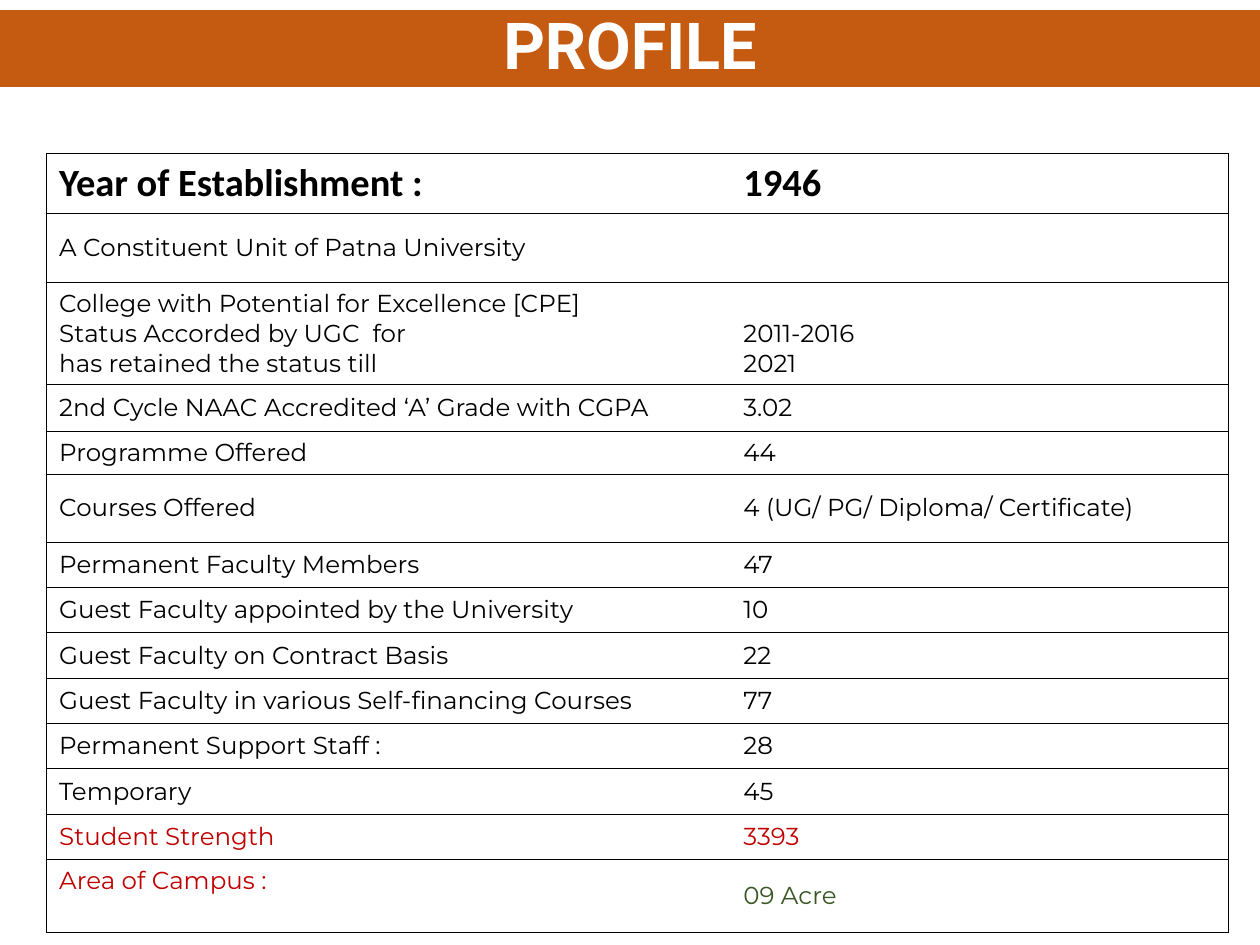
from lxml import etree
from pptx import Presentation
from pptx.dml.color import RGBColor
from pptx.enum.text import MSO_ANCHOR, MSO_AUTO_SIZE, PP_ALIGN
from pptx.oxml.ns import qn
from pptx.util import Inches, Pt

TOP, MIDDLE, BOTTOM = MSO_ANCHOR.TOP, MSO_ANCHOR.MIDDLE, MSO_ANCHOR.BOTTOM
CENTER = PP_ALIGN.CENTER
NO_AUTOFIT = MSO_AUTO_SIZE.NONE
TITLE_ONLY = 5

BLACK, WHITE, ORANGE = "000000", "FFFFFF", "C55A11"
RED, GREEN = "C00000", "385723"
COLUMN_WIDTHS = [5.43, 3.95]
PROFILE = [  # row height, label, value
    (0.47, "Year of Establishment :", "1946"),
    (0.55, "A Constituent Unit of Patna University", ""),
    (0.81, "College with Potential for Excellence [CPE]\n"
           "Status Accorded by UGC  for\nhas retained the status till",
     "2011-2016\n2021"),
    (0.37, "2nd Cycle NAAC Accredited ‘A’ Grade with CGPA", "3.02"),
    (0.34, "Programme Offered", "44"),
    (0.54, "Courses Offered", "4 (UG/ PG/ Diploma/ Certificate)"),
    (0.36, "Permanent Faculty Members", "47"),
    (0.36, "Guest Faculty appointed by the University", "10"),
    (0.36, "Guest Faculty on Contract Basis", "22"),
    (0.36, "Guest Faculty in various Self-financing Courses", "77"),
    (0.36, "Permanent Support Staff :", "28"),
    (0.36, "Temporary", "45"),
    (0.36, "Student Strength", "3393"),
    (0.58, "Area of Campus :", "09 Acre"),
]
HEADING_ROW, STATUS_ROW = 0, 2
STUDENT_ROW, CAMPUS_ROW = 12, 13
TEXT_COLOURS = {
    (STUDENT_ROW, 0): RED,
    (STUDENT_ROW, 1): RED,
    (CAMPUS_ROW, 0): RED,
    (CAMPUS_ROW, 1): GREEN,
}
ANCHORS = {(STATUS_ROW, 1): BOTTOM, (CAMPUS_ROW, 0): TOP}


def rgb(colour):
    return RGBColor.from_string(colour)


def style_text(frame, name, size, colour, bold=False):
    for para in frame.paragraphs:
        for span in para.runs:
            span.font.name = name
            span.font.size = Pt(size)
            span.font.bold = bold
            span.font.color.rgb = rgb(colour)


def set_borders(cell, drawn_sides):
    """Draw thin black lines on the given sides and clear the others."""
    properties = cell._tc.get_or_add_tcPr()
    for position, side in enumerate("LRTB"):
        line = etree.Element(qn(f"a:ln{side}"), w=str(Pt(0.5)))
        if side in drawn_sides:
            fill = etree.SubElement(line, qn("a:solidFill"))
            etree.SubElement(fill, qn("a:srgbClr"), val=BLACK)
        else:
            etree.SubElement(line, qn("a:noFill"))
        properties.insert(position, line)


def add_title(page):
    title = page.shapes.title
    title.left, title.top = Inches(0), Inches(0.08)
    title.width, title.height = Inches(10), Inches(0.61)
    title.fill.solid()
    title.fill.fore_color.rgb = rgb(ORANGE)
    frame = title.text_frame
    frame.text = "PROFILE"
    frame.auto_size = NO_AUTOFIT
    frame.vertical_anchor = MIDDLE
    frame.paragraphs[0].alignment = CENTER
    frame.paragraphs[0].line_spacing = 0.9
    style_text(frame, "Roboto", 37, WHITE, bold=True)


def fill_cell(cell, text, row, column):
    cell.text_frame.text = text
    cell.vertical_anchor = ANCHORS.get((row, column), MIDDLE)
    cell.fill.background()
    set_borders(cell, "TBL" if column == 0 else "TBR")
    if row == HEADING_ROW:
        style_text(cell.text_frame, "Calibri", 22, BLACK, bold=True)
    else:
        colour = TEXT_COLOURS.get((row, column), BLACK)
        style_text(cell.text_frame, "Montserrat", 14, colour)
    if not text:
        cell.text_frame.paragraphs[0].font.size = Pt(14)


def add_profile_table(page):
    height = sum(entry[0] for entry in PROFILE)
    table = page.shapes.add_table(
        len(PROFILE), len(COLUMN_WIDTHS), Inches(0.37), Inches(1.22),
        Inches(sum(COLUMN_WIDTHS)), Inches(height)).table
    table.first_row = False
    table.horz_banding = False
    for column, width in zip(table.columns, COLUMN_WIDTHS):
        column.width = Inches(width)
    for row, (row_height, *texts) in enumerate(PROFILE):
        table.rows[row].height = Inches(row_height)
        for column, text in enumerate(texts):
            fill_cell(table.cell(row, column), text, row, column)


def main():
    deck = Presentation()
    deck.slide_width, deck.slide_height = Inches(10), Inches(7.5)
    page = deck.slides.add_slide(deck.slide_layouts[TITLE_ONLY])
    add_title(page)
    add_profile_table(page)
    deck.save("out.pptx")


if __name__ == "__main__":
    main()
